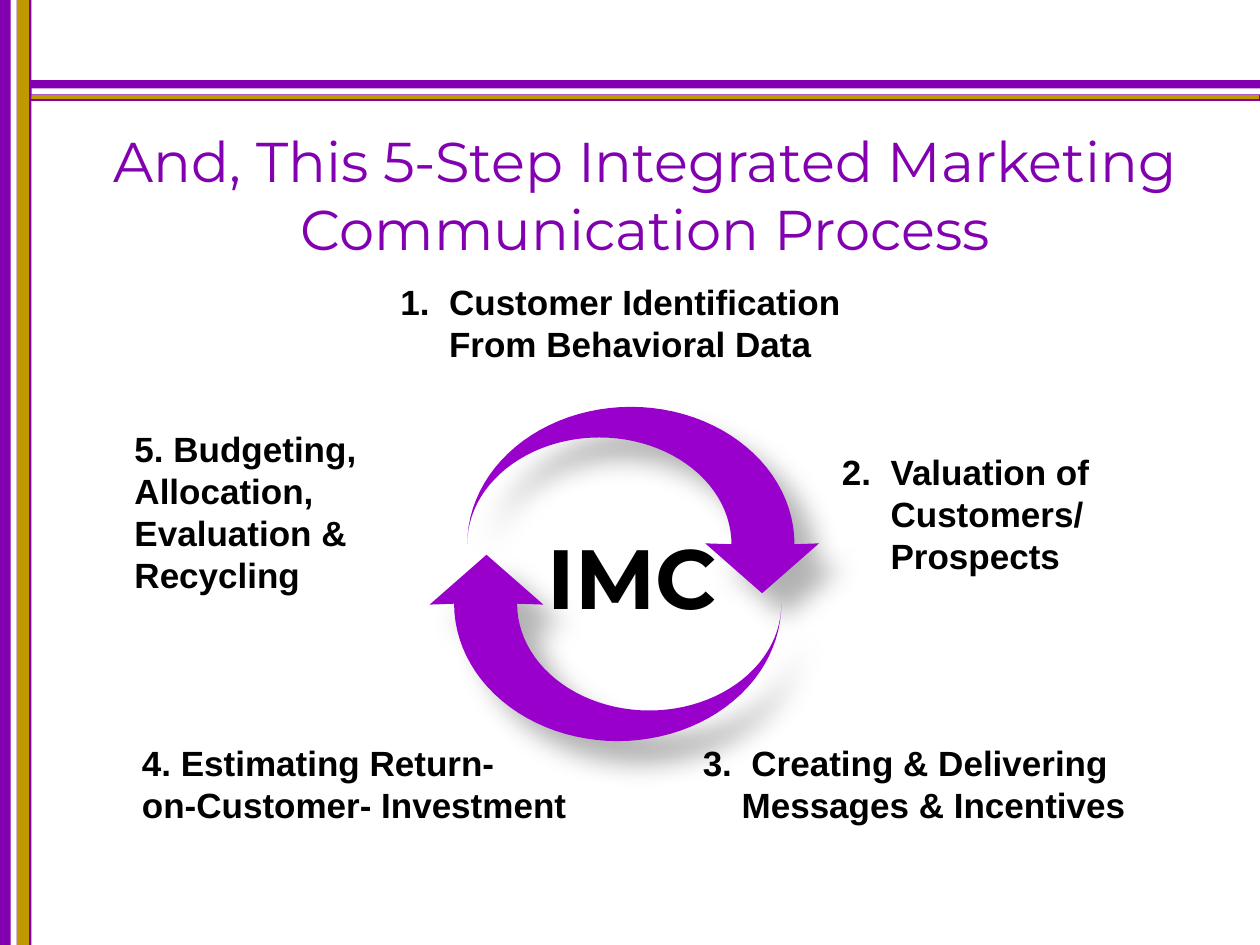
import math

from lxml import etree
from pptx import Presentation
from pptx.dml.color import RGBColor
from pptx.enum.shapes import MSO_SHAPE
from pptx.enum.text import MSO_ANCHOR, MSO_AUTO_SIZE, PP_ALIGN
from pptx.oxml.ns import qn
from pptx.util import Pt

RECTANGLE = MSO_SHAPE.RECTANGLE
MIDDLE = MSO_ANCHOR.MIDDLE
NO_AUTOFIT = MSO_AUTO_SIZE.NONE
LEFT, CENTER = PP_ALIGN.LEFT, PP_ALIGN.CENTER
TITLE_ONLY = 5

WIDTH, HEIGHT = 720, 540
PURPLE, GOLD, WHITE, BLACK = "8200B0", "BE9A00", "FFFFFF", "000000"
ARROW_PURPLE = "9900CC"


def color(text):
    return RGBColor.from_string(text)


def add_shadow(effects, blur, distance, opacity):
    """Add a soft black shadow, down to the right, to an a:effectLst."""
    shadow = etree.SubElement(
        effects, qn("a:outerShdw"), blurRad=str(Pt(blur)),
        dist=str(Pt(distance)), dir="2700000", algn="tl", rotWithShape="0")
    black = etree.SubElement(shadow, qn("a:srgbClr"), val=BLACK)
    etree.SubElement(black, qn("a:alpha"), val=str(opacity * 1000))


def ellipse_arc(center_x, center_y, radius_x, radius_y, steps=48):
    """Points of the upper half of an ellipse, from left to right."""
    angles = [math.pi * (1 - step / steps) for step in range(steps + 1)]
    return [(center_x + radius_x * math.cos(angle),
             center_y - radius_y * math.sin(angle)) for angle in angles]


class SlideBuilder:
    heading_font = "Montserrat"
    body_font = "Arial"

    def __init__(self, page):
        self.page = page

    def bar(self, left, top, width, height, fill, outline=None):
        shape = self.page.shapes.add_shape(
            RECTANGLE, Pt(left), Pt(top), Pt(width), Pt(height))
        shape.shadow.inherit = False
        shape.fill.solid()
        shape.fill.fore_color.rgb = color(fill)
        if outline:
            shape.line.color.rgb = color(outline)
            shape.line.width = Pt(0.75)
        else:
            shape.line.fill.background()

    def title(self, text, left, top, width, height):
        box = self.page.shapes.title
        box.left, box.top = Pt(left), Pt(top)
        box.width, box.height = Pt(width), Pt(height)
        frame = box.text_frame
        frame.text = text
        frame.word_wrap = True
        frame.auto_size = NO_AUTOFIT
        frame.vertical_anchor = MIDDLE
        para = frame.paragraphs[0]
        para.alignment = CENTER
        span = para.runs[0]
        span.font.size = Pt(32)
        span.font.color.rgb = color(PURPLE)
        properties = span.font._element
        add_shadow(etree.SubElement(properties, qn("a:effectLst")), 0, 2, 100)
        span.font.name = self.heading_font

    def text(self, lines, left, top, width, height, size=20, font=None,
             align=LEFT, indents=()):
        """Add bold lines; the first indent hangs, the later ones are plain."""
        box = self.page.shapes.add_textbox(
            Pt(left), Pt(top), Pt(width), Pt(height))
        frame = box.text_frame
        frame.word_wrap = True
        frame.text = "\n".join(lines)
        for para in frame.paragraphs:
            para.alignment = align
            for span in para.runs:
                span.font.size = Pt(size)
                span.font.bold = True
                span.font.name = font or self.body_font
                span.font.color.rgb = color(BLACK)
        for number, (para, indent) in enumerate(zip(frame.paragraphs, indents)):
            properties = para._p.get_or_add_pPr()
            properties.set("marL", str(Pt(indent)))
            properties.set("indent", str(-Pt(indent) if number == 0 else 0))

    def arrow(self, group, points):
        corners = [(Pt(x), Pt(y)) for x, y in points]
        builder = group.shapes.build_freeform(*corners[0])
        builder.add_line_segments(corners[1:], close=True)
        shape = builder.convert_to_shape()
        shape.fill.solid()
        shape.fill.fore_color.rgb = color(ARROW_PURPLE)
        shape.line.fill.background()
        shape.shadow.inherit = False
        effects = shape._element.spPr.find(qn("a:effectLst"))
        add_shadow(effects, 15, 18, 30)

    def cycle(self, center_x, center_y):
        """Draw a curved arrow and its half-turn about the centre."""
        outer = ellipse_arc(360.5, 311, 93.5, 78.5)
        inner = ellipse_arc(342.5, 311, 75.5, 61)
        head = [(468, 310.5), (435.5, 339), (403, 310.5)]
        upper = outer + head + inner[::-1]
        lower = [(2 * center_x - x, 2 * center_y - y) for x, y in upper]
        group = self.page.shapes.add_group_shape()
        for points in (upper, lower):
            self.arrow(group, points)


def main():
    deck = Presentation()
    deck.slide_width, deck.slide_height = Pt(WIDTH), Pt(HEIGHT)
    page = deck.slides.add_slide(deck.slide_layouts[TITLE_ONLY])
    slide = SlideBuilder(page)

    slide.bar(0, 46, WIDTH, 8, PURPLE, PURPLE)
    slide.bar(6, 53.75, WIDTH - 6, 3.5, GOLD, PURPLE)
    for left, width, fill in ((0, 18, PURPLE), (9.5, 7, GOLD), (6, 3.5, WHITE)):
        slide.bar(left, 0, width, HEIGHT, fill)
    slide.bar(18, 50.5, WIDTH - 18, 3.5, WHITE)

    slide.title("And, This 5-Step Integrated Marketing Communication Process",
                30, 48, 678, 126)
    slide.cycle(356.75, 328)

    slide.text(["1.\tCustomer Identification", "From Behavioral Data"],
               221.75, 156.5, 276.5, 55.5, indents=(27.8, 27.8))
    slide.text(["2.\tValuation of", "Customers/", "Prospects"],
               474, 254, 162, 79, indents=(27.8, 27.8, 27.8))
    slide.text(["3.\tCreating & Delivering", "Messages & Incentives"],
               394.5, 420, 262, 55.5, indents=(27.8, 22.2))
    slide.text(["4. Estimating Return-", "on-Customer- Investment"],
               74, 420, 322, 55.5)
    slide.text(["5. Budgeting, Allocation, Evaluation &", "Recycling"],
               69.75, 240.5, 206, 103)
    slide.text(["IMC"], 301.75, 296.5, 119, 65, size=48,
               font=slide.heading_font, align=CENTER)

    deck.save("out.pptx")


if __name__ == "__main__":
    main()
